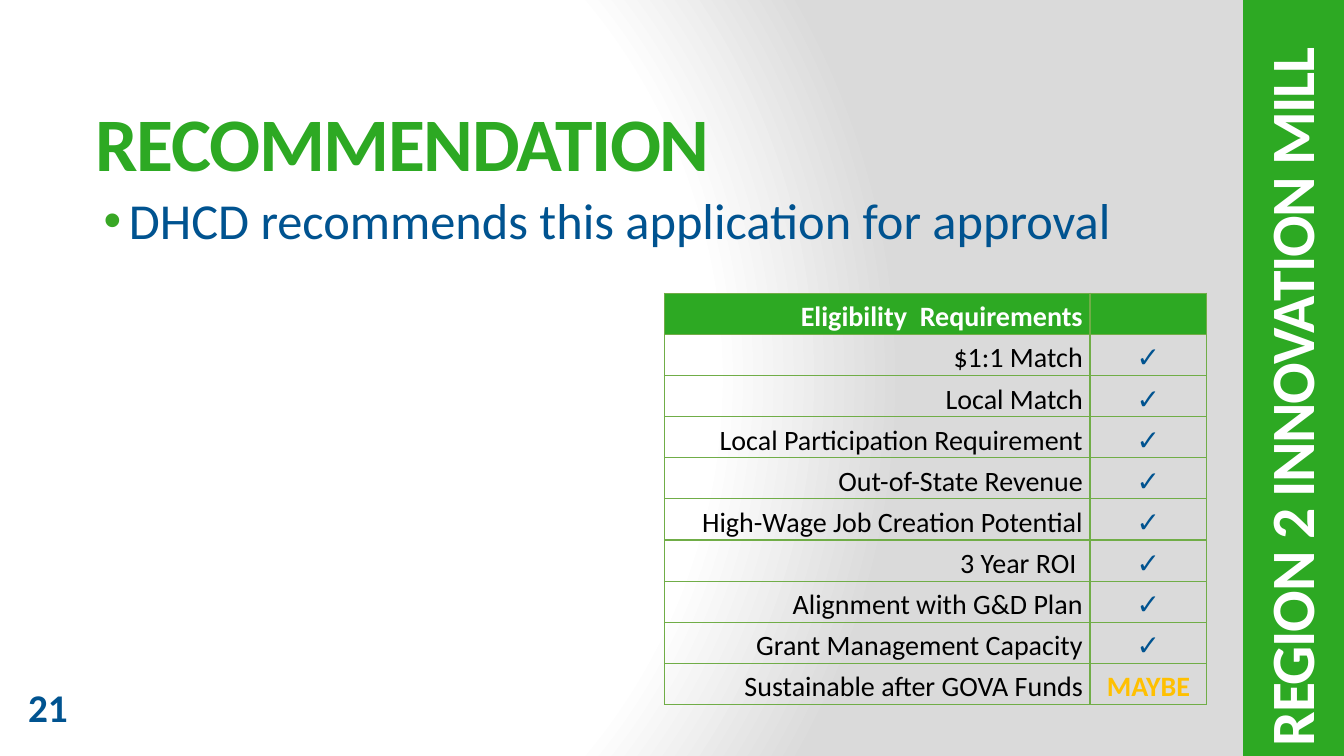
import pptx
import pptx.util
import pptx.dml.color
import pptx.enum.shapes
import pptx.enum.text
import pptx.oxml
import pptx.oxml.ns
from lxml import etree

Inches, Pt = pptx.util.Inches, pptx.util.Pt
RGBColor = pptx.dml.color.RGBColor
ALIGN, ANCHOR = pptx.enum.text.PP_ALIGN, pptx.enum.text.MSO_ANCHOR
qn = pptx.oxml.ns.qn

# Content
TITLE = "RECOMMENDATION"
RECOMMENDATION = "DHCD recommends this application for approval"
PROJECT = "REGION 2 INNOVATION MILL"
PAGE_NUMBER = "21"
TABLE_HEADER = "Eligibility  Requirements"
CHECK, MAYBE = "✓", "MAYBE"
REQUIREMENTS = [
    ("$1:1 Match", CHECK),
    ("Local Match", CHECK),
    ("Local Participation Requirement", CHECK),
    ("Out-of-State Revenue", CHECK),
    ("High-Wage Job Creation Potential", CHECK),
    ("3 Year ROI ", CHECK),
    ("Alignment with G&D Plan", CHECK),
    ("Grant Management Capacity", CHECK),
    ("Sustainable after GOVA Funds", MAYBE),
]

# Look
FONT = "Calibri"
GREEN = RGBColor(0x2D, 0xA9, 0x23)
BULLET_GREEN = RGBColor(0x38, 0xA7, 0x25)
BORDER_GREEN = RGBColor(0x70, 0xAD, 0x47)
BLUE = RGBColor(0x00, 0x53, 0x90)
AMBER = RGBColor(0xFF, 0xC0, 0x00)
BLACK = RGBColor(0x00, 0x00, 0x00)
WHITE = RGBColor(0xFF, 0xFF, 0xFF)
GREY = RGBColor(0xDA, 0xDA, 0xDA)
COLUMN_WIDTHS = (4.22, 1.16)
ROW_HEIGHT = 0.408


def add_run(paragraph, text, size, color, bold=False, spacing=None):
    run = paragraph.add_run()
    run.text = text
    run.font.name = FONT
    run.font.size = Pt(size)
    run.font.bold = bold
    run.font.color.rgb = color
    if spacing is not None:
        run.font._element.set("spc", str(spacing * 100))


def add_text(slide, box, text, size, color, bold=False, spacing=None, anchor=ANCHOR.TOP):
    shape = slide.shapes.add_textbox(*map(Inches, box))
    shape.text_frame.word_wrap = True
    shape.text_frame.vertical_anchor = anchor
    add_run(shape.text_frame.paragraphs[0], text, size, color, bold, spacing)
    return shape


def set_bullet(paragraph, color):
    properties = paragraph._p.get_or_add_pPr()
    properties.set("marL", str(Inches(0.38)))
    properties.set("indent", str(Inches(-0.25)))
    bullet_color = etree.SubElement(properties, qn("a:buClr"))
    etree.SubElement(bullet_color, qn("a:srgbClr")).set("val", str(color))
    etree.SubElement(properties, qn("a:buFont")).set("typeface", "Arial")
    etree.SubElement(properties, qn("a:buChar")).set("char", "•")


def set_borders(cell):
    properties = cell._tc.get_or_add_tcPr()
    for side in ("lnL", "lnR", "lnT", "lnB"):
        line = etree.SubElement(properties, qn("a:" + side))
        line.set("w", str(Pt(1)))
        fill = etree.SubElement(line, qn("a:solidFill"))
        etree.SubElement(fill, qn("a:srgbClr")).set("val", str(BORDER_GREEN))


def fill_cell(cell, text, align, color, bold, fill=None):
    cell.margin_left = cell.margin_right = Inches(0.07)
    cell.margin_top = cell.margin_bottom = 0
    cell.vertical_anchor = ANCHOR.BOTTOM
    set_borders(cell)
    if fill is None:
        cell.fill.background()
    else:
        cell.fill.solid()
        cell.fill.fore_color.rgb = fill
    paragraph = cell.text_frame.paragraphs[0]
    paragraph.alignment = align
    paragraph.line_spacing = 1.15
    if text:
        add_run(paragraph, text, 20, color, bold)


def set_background(slide):
    slide.background.fill.solid()
    properties = slide._element.find(".//" + qn("p:bgPr"))
    stops = "".join(
        f'<a:gs pos="{percent * 1000}"><a:srgbClr val="{color}"/></a:gs>'
        for percent, color in ((0, WHITE), (75, WHITE), (100, GREY)))
    gradient = pptx.oxml.parse_xml(
        f'<a:gradFill {pptx.oxml.ns.nsdecls("a")} rotWithShape="1"><a:gsLst>{stops}</a:gsLst>'
        '<a:path path="circle"><a:fillToRect l="20000" t="50000" r="100000" b="50000"/>'
        '</a:path></a:gradFill>')
    properties.replace(properties[0], gradient)


def add_requirements(slide):
    rows = [(TABLE_HEADER, "")] + REQUIREMENTS
    frame = slide.shapes.add_table(
        len(rows), len(COLUMN_WIDTHS), Inches(6.59), Inches(2.91),
        Inches(sum(COLUMN_WIDTHS)), Inches(ROW_HEIGHT * len(rows)))
    table = frame.table
    table.first_row = table.horz_banding = False
    for column, width in zip(table.columns, COLUMN_WIDTHS):
        column.width = Inches(width)
    for index, (requirement, status) in enumerate(rows):
        table.rows[index].height = Inches(ROW_HEIGHT)
        header = index == 0
        fill = GREEN if header else None
        fill_cell(table.cell(index, 0), requirement, ALIGN.RIGHT,
                  WHITE if header else BLACK, header, fill)
        fill_cell(table.cell(index, 1), status, ALIGN.CENTER,
                  AMBER if status == MAYBE else BLUE, True, fill)


def main():
    presentation = pptx.Presentation()
    presentation.slide_width, presentation.slide_height = Inches(13.33), Inches(7.5)
    slide = presentation.slides.add_slide(presentation.slide_layouts[6])
    set_background(slide)

    # Side band and page number
    band = slide.shapes.add_shape(
        pptx.enum.shapes.MSO_SHAPE.RECTANGLE, Inches(12.33), 0, Inches(1), Inches(7.5))
    band.shadow.inherit = False
    band.fill.solid()
    band.fill.fore_color.rgb = GREEN
    band.line.fill.background()
    add_text(slide, (0.18, 6.73, 1.06, 0.57), PAGE_NUMBER, 28, BLUE, bold=True)

    # Title, recommendation and project name
    add_text(slide, (0.85, 0.86, 11.49, 1.08), TITLE, 54, GREEN, True, -1, ANCHOR.MIDDLE)
    body = add_text(slide, (0.8, 1.83, 11.36, 5.09), RECOMMENDATION, 36, BLUE)
    set_bullet(body.text_frame.paragraphs[0], BULLET_GREEN)
    project = add_text(slide, (8.85, 3.02, 7.88, 1.08), PROJECT, 44, WHITE, True, -1,
                       ANCHOR.MIDDLE)
    project.rotation = 270

    # Eligibility table
    add_requirements(slide)
    presentation.save("out.pptx")


if __name__ == "__main__":
    main()
